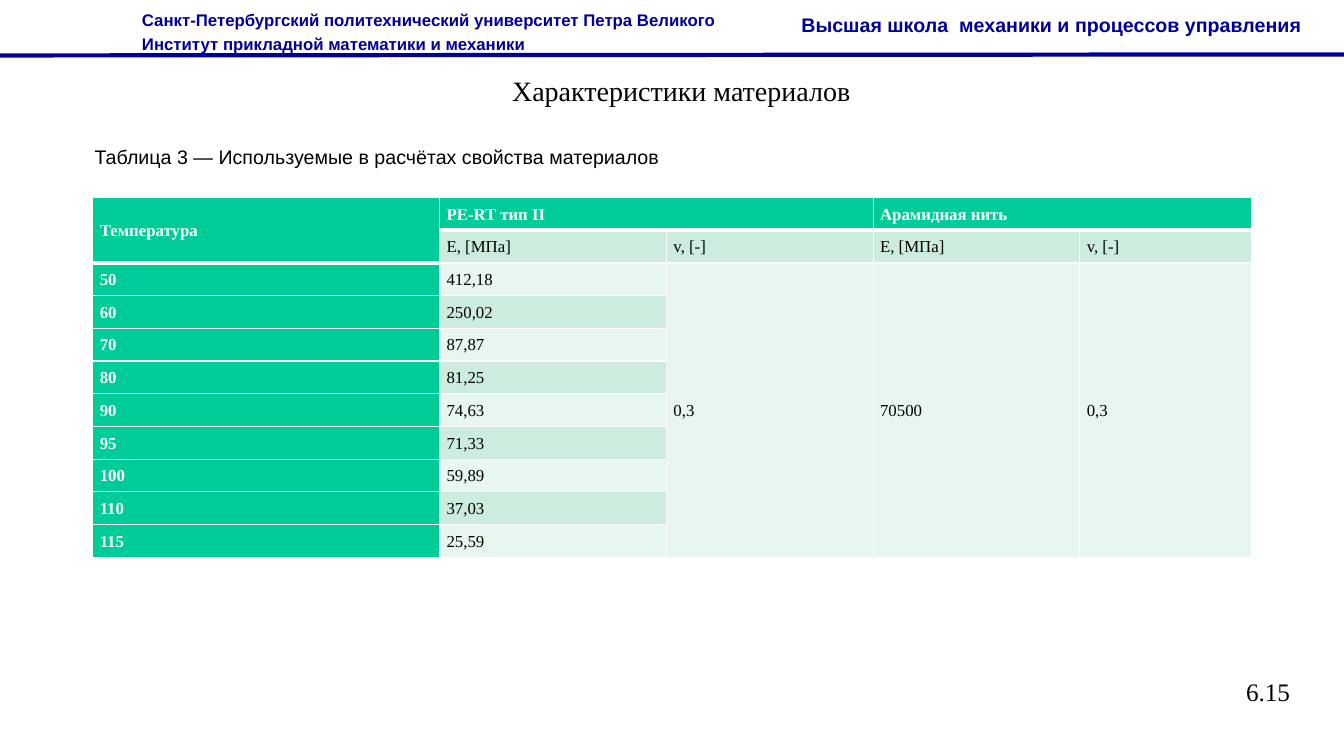
from lxml.etree import SubElement
from pptx import Presentation
from pptx.dml.color import RGBColor
from pptx.enum.shapes import MSO_CONNECTOR
from pptx.enum.text import MSO_ANCHOR, PP_ALIGN
from pptx.oxml import parse_xml
from pptx.oxml.ns import nsdecls, qn
from pptx.util import Inches, Pt

NAVY = RGBColor(0x00, 0x00, 0x99)
BLACK = RGBColor(0x00, 0x00, 0x00)
WHITE = RGBColor(0xFF, 0xFF, 0xFF)
GREEN = RGBColor(0x00, 0xCC, 0x99)
MINT = RGBColor(0xCC, 0xEC, 0xDE)
PALE = RGBColor(0xE7, 0xF6, 0xEF)
SANS, SERIF = "Arial", "Times New Roman"

# text, (left, top, width, height), size, font, colour, bold, line spacing, wrap
TEXTS = [
    ("Санкт-Петербургский политехнический университет Петра Великого\v"
     "Институт прикладной математики и механики",
     (1.31, 0.01, 6.17, 0.56), 12, SANS, NAVY, True, 1.2, True),
    ("Высшая школа  механики и процессов управления",
     (7.85, 0.03, 6.14, 0.38), 14, SANS, NAVY, True, 1.2, True),
    ("Характеристики материалов",
     (4.98, 0.68, 3.59, 0.44), 20, SERIF, BLACK, False, 1.0, False),
    ("Таблица 3 — Используемые в расчётах свойства материалов",
     (0.84, 1.39, 5.94, 0.64), 14, SANS, BLACK, False, 1.0, False),
    ("6.15", (12.26, 6.66, 0.71, 0.4), 18, SERIF, BLACK, False, 1.0, True),
]

HEADS = [
    ["Температура", "PE-RT тип II", "", "Арамидная нить", ""],
    ["", "E, [МПа]", "v, [-]", "E, [МПа]", "v, [-]"],
]
MODULI = [
    ("50", "412,18"), ("60", "250,02"), ("70", "87,87"),
    ("80", "81,25"), ("90", "74,63"), ("95", "71,33"),
    ("100", "59,89"), ("110", "37,03"), ("115", "25,59"),
]
SHARED = ["0,3", "70500", "0,3"]
COLS = [3.44, 2.25, 2.05, 2.05, 1.7]
TABLE_BOX = (0.92, 1.96, 11.49, 3.57)


def style(para, size, font, color, bold, spacing):
    para.line_spacing = spacing
    para.font.size = Pt(size)
    para.font.name = font
    para.font.color.rgb = color
    para.font.bold = bold


def add_text(slide, text, box, size, font, color, bold, spacing, wrap):
    frame = slide.shapes.add_textbox(*map(Inches, box)).text_frame
    frame.word_wrap = wrap
    frame.text = text
    style(frame.paragraphs[0], size, font, color, bold, spacing)


def add_edges(cell, base):
    """Draw white cell borders, the bottom one base points wide."""
    props = cell._tc.get_or_add_tcPr()
    for i, side in enumerate("LRTB"):
        width = Pt(base if side == "B" else 1)
        props.insert(i, parse_xml(
            f'<a:ln{side} {nsdecls("a")} w="{width}"><a:solidFill>'
            f'<a:srgbClr val="{WHITE}"/></a:solidFill></a:ln{side}>'))


def add_table(slide):
    rows = HEADS + [[*pair, *(SHARED if i == 0 else [""] * 3)]
                    for i, pair in enumerate(MODULI)]
    last = len(rows) - 1
    shape = slide.shapes.add_table(
        len(rows), len(COLS), *map(Inches, TABLE_BOX))
    table = shape.table
    for col, width in zip(table.columns, COLS):
        col.width = Inches(width)
    for row in table.rows:
        row.height = Inches(TABLE_BOX[3] / len(rows))
    for r, row in enumerate(rows):
        for c, text in enumerate(row):
            cell = table.cell(r, c)
            head = r == 0 or c == 0
            band = MINT if r % 2 and (c < 2 or r == 1) else PALE
            cell.fill.solid()
            cell.fill.fore_color.rgb = GREEN if head else band
            cell.margin_left = cell.margin_right = Inches(0.07)
            cell.margin_top = cell.margin_bottom = 0
            cell.vertical_anchor = MSO_ANCHOR.MIDDLE
            cell.text = text
            para = cell.text_frame.paragraphs[0]
            para.alignment = PP_ALIGN.JUSTIFY
            style(para, 12, SERIF, WHITE if head else BLACK, head, 1.07)
            add_edges(cell, 3 if r == 0 or (r, c) == (1, 0) else 1)
    merges = [((0, 0), (1, 0)), ((0, 1), (0, 2)), ((0, 3), (0, 4))]
    merges += [((2, c), (last, c)) for c in (2, 3, 4)]
    for start, end in merges:
        table.cell(*start).merge(table.cell(*end))


def add_rule(slide):
    ends = map(Inches, (-0.03, 0.55, 13.33, 0.54))
    rule = slide.shapes.add_connector(MSO_CONNECTOR.STRAIGHT, *ends)
    rule.line.color.rgb = NAVY
    rule.line.width = Pt(3)
    SubElement(rule._element.spPr, qn("a:effectLst"))


def main():
    deck = Presentation()
    deck.slide_width, deck.slide_height = Inches(13.33), Inches(7.5)
    slide = deck.slides.add_slide(deck.slide_layouts[6])
    add_rule(slide)
    for item in TEXTS:
        add_text(slide, *item)
    add_table(slide)
    deck.save("out.pptx")


if __name__ == "__main__":
    main()
